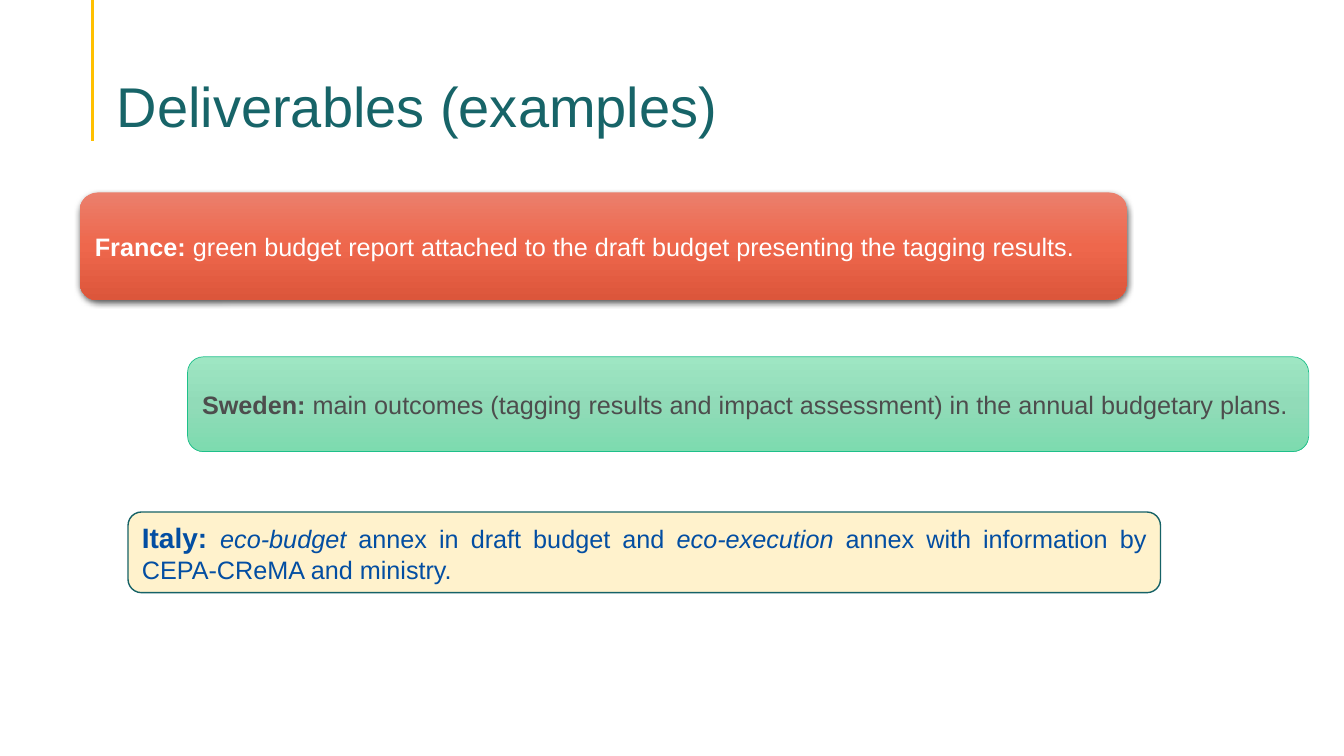
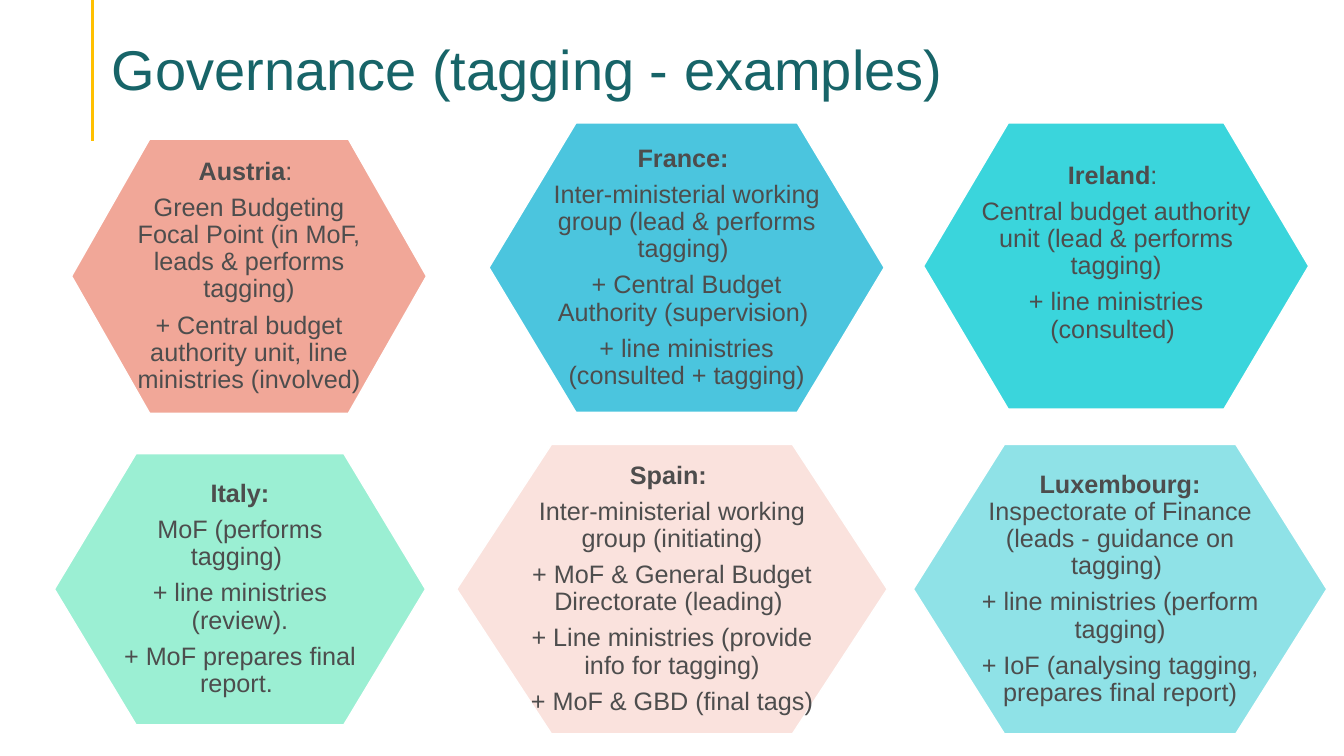
from lxml import etree
from pptx import Presentation
from pptx.dml.color import RGBColor
from pptx.enum.shapes import MSO_CONNECTOR as LINE, MSO_SHAPE as SHAPE
from pptx.enum.text import MSO_ANCHOR as ANCHOR, PP_ALIGN as ALIGN
from pptx.oxml.ns import qn
from pptx.util import Inches, Pt

FONT = "Arial"
TEAL = RGBColor(0x17, 0x64, 0x68)
GOLD = RGBColor(0xFF, 0xC0, 0x00)
WHITE = RGBColor(0xFF, 0xFF, 0xFF)
GREY = RGBColor(0x4D, 0x4D, 0x4D)
BLUE = RGBColor(0x03, 0x4E, 0xA2)
CREAM = RGBColor(0xFF, 0xF2, 0xCC)
EDGE = RGBColor(0x16, 0x62, 0x67)
GREEN = RGBColor(0x1E, 0xC0, 0x8A)
REDS = [RGBColor(0xEB, 0x7F, 0x6C), RGBColor(0xEE, 0x67, 0x4C),
        RGBColor(0xDC, 0x56, 0x3B)]
MINTS = [RGBColor(0x9E, 0xE6, 0xC3), RGBColor(0x91, 0xDB, 0xB8),
         RGBColor(0x7D, 0xDB, 0xAF)]
SALMON = RGBColor(0xF1, 0xA7, 0x98)
SKY = RGBColor(0x4B, 0xC5, 0xDE)
AQUA = RGBColor(0x3A, 0xD5, 0xDC)
MINT = RGBColor(0x9B, 0xEF, 0xD3)
BLUSH = RGBColor(0xFA, 0xE2, 0xDD)
ICE = RGBColor(0x8F, 0xE2, 0xE7)

# Each card: box, colours, line width, shape and runs of (text, flags, size)
ROUND = SHAPE.ROUNDED_RECTANGLE
CARDS = [
    dict(box=(1.27, 5.08, 10.24, 0.8), fill=CREAM, edge=EDGE, width=1,
         kind=SHAPE.FLOWCHART_ALTERNATE_PROCESS, ink=BLUE,
         align=ALIGN.JUSTIFY,
         runs=[("Italy: ", "b", 20), ("eco-budget", "i"),
               (" annex in draft budget and ", ""), ("eco-execution", "i"),
               (" annex with information by CEPA-CReMA and ministry. ", "")]),
    dict(box=(0.79, 1.91, 10.39, 1.07), fill=REDS, ink=WHITE, glow=True,
         runs=[("France: ", "b"),
               ("green budget report attached to the draft budget "
                "presenting the tagging results.", "")]),
    dict(box=(1.86, 3.54, 11.12, 0.94), fill=MINTS, edge=GREEN, width=0.5,
         runs=[("Sweden: ", "b"),
               ("main outcomes (tagging results and impact assessment) "
                "in the annual budgetary plans.", "")]),
]

# Each hexagon: box, colour, insets (left, top, right, bottom), paragraphs
PAD = (0.57, 0.44, 0.57, 0.44)
HEXES = [
    ((9.06, 4.41, 4.1, 2.87), ICE, (0.58, 0.46, 0.58, 0.46), [
        [("Luxembourg: ", "b"),
         ("Inspectorate of Finance (leads - guidance on tagging) ", "")],
        "+ line ministries (perform tagging)",
        "+ IoF (analysing tagging, prepares final report)"]),
    ((4.85, 1.22, 3.92, 2.87), SKY, (0.54, 0.43, 0.54, 0.43), [
        [("France: ", "b")],
        "Inter-ministerial working group (lead & performs tagging) ",
        "+ Central Budget Authority (supervision) ",
        "+ line ministries (consulted + tagging)"]),
    ((9.16, 1.22, 3.82, 2.84), AQUA, (0.57, 0.44, 0.57, 0.7), [
        [("Ireland", "b"), (": ", "")],
        "Central budget authority unit (lead & performs tagging)",
        "+ line ministries (consulted) "]),
    ((0.54, 4.5, 3.68, 2.69), MINT, PAD, [
        [("Italy:", "b")],
        "MoF (performs tagging) ",
        "+ line ministries (review).",
        "+ MoF prepares final report. "]),
    ((0.71, 1.38, 3.52, 2.72), SALMON, PAD, [
        [("Austria", "b"), (": ", "")],
        "Green Budgeting Focal Point (in MoF, leads & performs tagging)",
        "+ Central budget authority unit, line ministries (involved)"]),
    ((4.53, 4.41, 4.27, 2.87), BLUSH, PAD, [
        [("Spain: ", "b")],
        "Inter-ministerial working group (initiating)",
        "+ MoF & General Budget Directorate (leading) ",
        "+ Line ministries (provide info for tagging)",
        "+ MoF & GBD (final tags)"]),
]


def write(shape, paras, size=18, ink=GREY, align=ALIGN.LEFT, lead=1.0,
          after=0, anchor=ANCHOR.MIDDLE, pad=(0.1, 0.05, 0.1, 0.05)):
    """Fill a shape with paragraphs, each a string or a list of runs."""
    frame = shape.text_frame
    frame.word_wrap = True
    frame.vertical_anchor = anchor
    (frame.margin_left, frame.margin_top,
     frame.margin_right, frame.margin_bottom) = map(Inches, pad)
    for i, runs in enumerate(paras):
        para = frame.add_paragraph() if i else frame.paragraphs[0]
        para.alignment = align
        para.line_spacing = lead
        para.space_after = Pt(after)
        for text, flags, *own in [(runs, "")] if isinstance(runs, str) else runs:
            run = para.add_run()
            run.text = text
            font = run.font
            font.name, font.size = FONT, Pt(own[0] if own else size)
            font.bold, font.italic = "b" in flags, "i" in flags
            font.color.rgb = ink


def paint(shape, fill, edge=None, width=1):
    """Set a plain fill, or a top-down gradient from a list of colours."""
    shape.shadow.inherit = False
    if isinstance(fill, list):
        shape.fill.gradient()
        shape.fill.gradient_angle = 270
        stops = shape._element.spPr.find(".//" + qn("a:gsLst"))
        stops.clear()
        for i, tone in enumerate(fill):
            stop = etree.SubElement(stops, qn("a:gs"),
                                    pos=str(100000 * i // (len(fill) - 1)))
            etree.SubElement(stop, qn("a:srgbClr"), val=str(tone))
    else:
        shape.fill.solid()
        shape.fill.fore_color.rgb = fill
    if edge is None:
        shape.line.fill.background()
    else:
        shape.line.color.rgb = edge
        shape.line.width = Pt(width)


def shade(shape):
    """Add a soft shadow just below the shape."""
    effects = shape._element.spPr.find(qn("a:effectLst"))
    outer = etree.SubElement(effects, qn("a:outerShdw"), blurRad=str(Pt(4.5)),
                             dist=str(Pt(1.5)), dir="5400000", rotWithShape="0")
    tone = etree.SubElement(outer, qn("a:srgbClr"), val="000000")
    etree.SubElement(tone, qn("a:alpha"), val="63000")


def start(deck, title, left, top):
    """Add a slide with the gold rule and its title."""
    slide = deck.slides.add_slide(deck.slide_layouts[6])
    rule = slide.shapes.add_connector(LINE.STRAIGHT, Inches(0.92), 0,
                                      Inches(0.92), Inches(1.4))
    rule.line.color.rgb = GOLD
    rule.line.width = Pt(2.25)
    etree.SubElement(rule._element.spPr, qn("a:effectLst"))
    box = slide.shapes.add_textbox(*map(Inches, (left, top, 11.5, 0.86)))
    write(box, [title], size=40, ink=TEAL, lead=0.9, anchor=ANCHOR.BOTTOM,
          pad=(0.1, 0.05, 0.1, 0))
    return slide


def card(slide, box, fill, runs, edge=None, width=1, kind=ROUND, ink=GREY,
         align=ALIGN.LEFT, glow=False):
    """Add a rounded country card."""
    shape = slide.shapes.add_shape(kind, *map(Inches, box))
    paint(shape, fill, edge, width)
    if glow:
        shade(shape)
    write(shape, [runs], ink=ink, align=align)


def hexagon(slide, box, fill, pad, paras):
    """Add a country hexagon whose side points take 22% of its width."""
    x, y, w, h = box
    cut, mid = 0.22 * w, y + h / 2
    dots = [(x + cut, y), (x + w - cut, y), (x + w, mid),
            (x + w - cut, y + h), (x + cut, y + h)]
    path = slide.shapes.build_freeform(Inches(x), Inches(mid))
    path.add_line_segments([(Inches(a), Inches(b)) for a, b in dots])
    shape = path.convert_to_shape()
    paint(shape, fill, WHITE)
    write(shape, paras, align=ALIGN.CENTER, lead=0.9, after=6.3, pad=pad)


def main():
    deck = Presentation()
    deck.slide_width, deck.slide_height = Inches(13.33), Inches(7.5)

    # Deliverables
    slide = start(deck, "Deliverables (examples)", 1.06, 0.53)
    for item in CARDS:
        card(slide, **item)

    # Governance
    slide = start(deck, "Governance (tagging - examples)", 1.01, 0.16)
    for item in HEXES:
        hexagon(slide, *item)

    deck.save("out.pptx")


if __name__ == "__main__":
    main()
